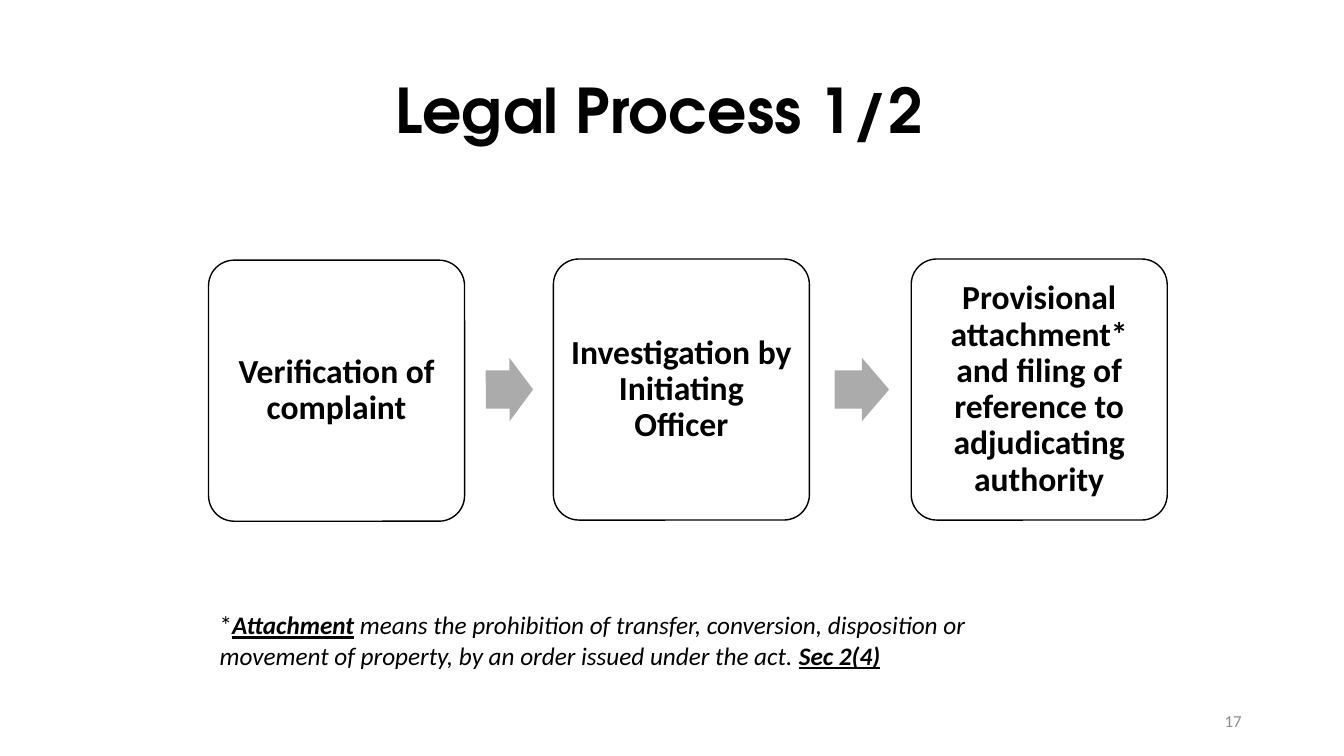
import pptx
import pptx.util
import pptx.dml.color
import pptx.enum.shapes
import pptx.enum.text

Pt = pptx.util.Pt
RGBColor = pptx.dml.color.RGBColor
SHAPE = pptx.enum.shapes.MSO_SHAPE
ALIGN = pptx.enum.text.PP_ALIGN
MIDDLE = pptx.enum.text.MSO_ANCHOR.MIDDLE
TOP = pptx.enum.text.MSO_ANCHOR.TOP

BLACK = RGBColor(0x00, 0x00, 0x00)
WHITE = RGBColor(0xFF, 0xFF, 0xFF)
ARROW_GREY = RGBColor(0xAB, 0xAB, 0xAB)
NUMBER_GREY = RGBColor(0x8C, 0x8C, 0x8C)

TITLE = "Legal Process 1/2"
# text, left, top
STEPS = [
    ("Verification of complaint", 149, 185.8),
    ("Investigation by Initiating Officer", 395.3, 185),
    ("Provisional attachment* and filing of reference to adjudicating authority", 650.9, 185),
]
# left, width, rotation
ARROWS = [(347, 33.8, 359.8), (596.2, 38.9, 0)]
# text, bold and underlined, italic
FOOTNOTE = [
    ("*", False, False),
    ("Attachment", True, True),
    (" means the prohibition of transfer, conversion, disposition or movement "
     "of property, by an order issued under the act. ", False, True),
    ("Sec 2(4)", True, True),
]
PAGE = "17"

BOX_W, BOX_H = 182.9, 186.5
ARROW_H = 45.4
ARROW_TOP = 185 + (BOX_H - ARROW_H) / 2


def add_text(sp, runs, size, font="Calibri", color=BLACK, bold=False,
             align=ALIGN.LEFT, anchor=MIDDLE, spacing=1.0, inset=7.2):
    """Fill a shape with one paragraph of (text, emphasis, italic) runs."""
    tf = sp.text_frame
    tf.word_wrap = True
    tf.vertical_anchor = anchor
    tf.margin_left = tf.margin_right = Pt(inset)
    p = tf.paragraphs[0]
    p.alignment = align
    p.line_spacing = spacing
    for text, emphasis, italic in runs:
        r = p.add_run()
        r.text = text
        r.font.name = font
        r.font.size = Pt(size)
        r.font.color.rgb = color
        r.font.bold = bold or emphasis
        r.font.underline = emphasis
        r.font.italic = italic


def add_filled(s, kind, box, fill, adjustments):
    sp = s.shapes.add_shape(kind, *map(Pt, box))
    sp.shadow.inherit = False
    sp.fill.solid()
    sp.fill.fore_color.rgb = fill
    for i, value in enumerate(adjustments):
        sp.adjustments[i] = value
    return sp


def main():
    prs = pptx.Presentation()
    prs.slide_width, prs.slide_height = Pt(960), Pt(540)
    s = prs.slides.add_slide(prs.slide_layouts[5])

    title = s.shapes.title
    title.left, title.top, title.width, title.height = map(Pt, (239.8, 28.8, 462.2, 104.4))
    add_text(title, [(TITLE, False, False)], 44, font="TeX Gyre Adventor",
             bold=True, align=ALIGN.CENTER, spacing=0.9)

    for text, left, top in STEPS:
        sp = add_filled(s, SHAPE.ROUNDED_RECTANGLE, (left, top, BOX_W, BOX_H), WHITE, [0.1])
        sp.line.color.rgb = BLACK
        sp.line.width = Pt(1)
        add_text(sp, [(text, False, False)], 24, bold=True,
                 align=ALIGN.CENTER, spacing=0.9, inset=6.8)

    for left, width, rotation in ARROWS:
        sp = add_filled(s, SHAPE.RIGHT_ARROW, (left, ARROW_TOP, width, ARROW_H),
                        ARROW_GREY, [0.6, 0.5])
        sp.line.fill.background()
        sp.rotation = rotation

    note = s.shapes.add_textbox(Pt(149.8), Pt(432), Pt(617.8), Pt(51))
    add_text(note, FOOTNOTE, 18, anchor=TOP)
    number = s.shapes.add_textbox(Pt(678), Pt(500.4), Pt(216), Pt(28.8))
    add_text(number, [(PAGE, False, False)], 12, color=NUMBER_GREY, align=ALIGN.RIGHT)

    prs.save("out.pptx")


if __name__ == "__main__":
    main()
